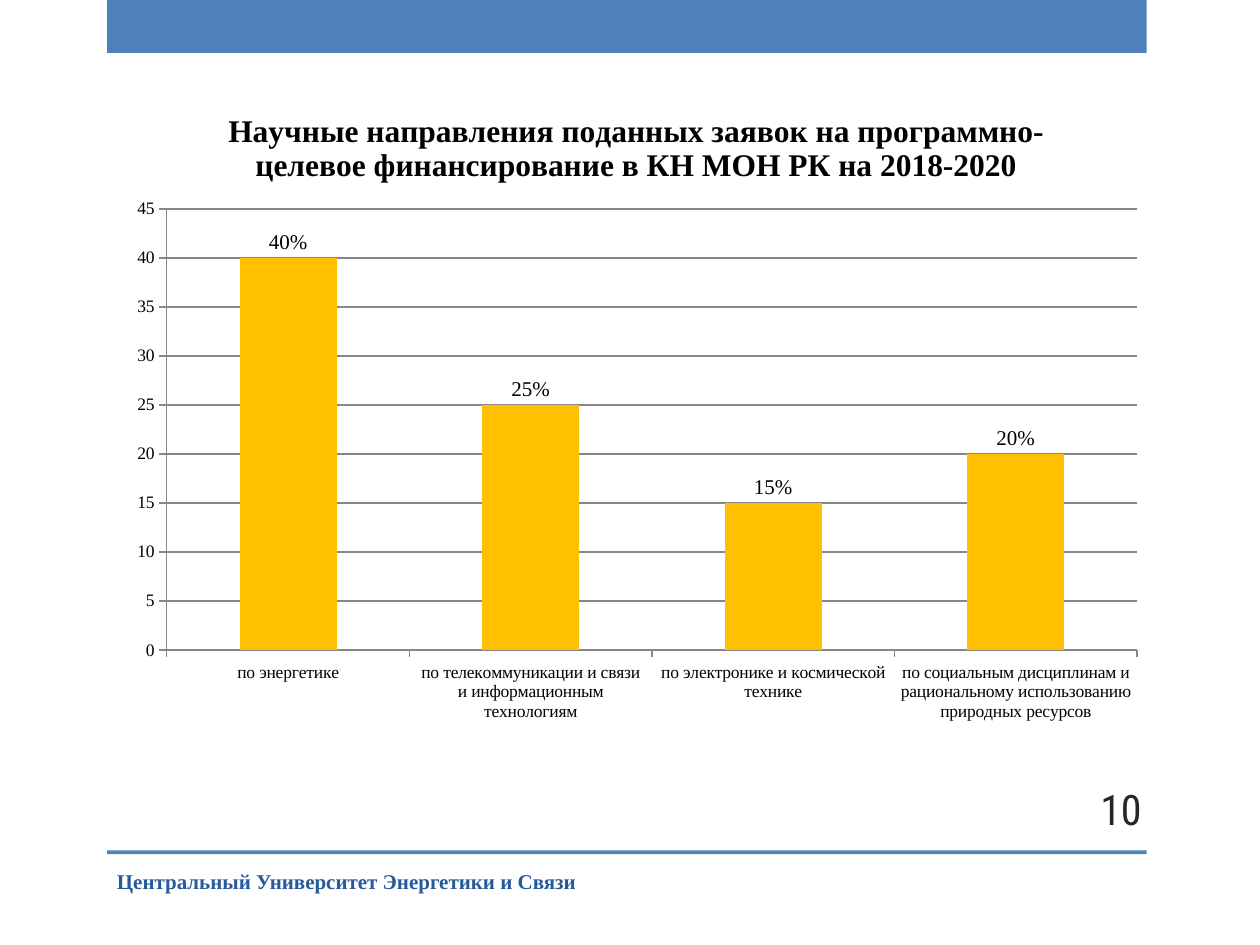
from dataclasses import dataclass

from lxml.etree import SubElement
from pptx import Presentation
from pptx.chart.data import CategoryChartData
from pptx.dml.color import RGBColor
from pptx.enum.chart import XL_CHART_TYPE, XL_LABEL_POSITION, XL_TICK_MARK
from pptx.enum.shapes import MSO_SHAPE
from pptx.enum.text import MSO_ANCHOR, PP_ALIGN
from pptx.oxml.ns import qn
from pptx.util import Inches, Pt


@dataclass(frozen=True)
class Theme:
    """Colours, fonts and type sizes of the slide."""
    band: str = "4F81BD"
    brand: str = "265A99"
    number: str = "262626"
    bar: str = "FFC000"
    grid: str = "878787"
    ink: str = "000000"
    serif: str = "Times New Roman"
    sans: str = "Roboto Condensed"
    axis: int = 10
    label: int = 12
    title: int = 18
    page: int = 24


@dataclass(frozen=True)
class Box:
    """A place on the slide, in inches."""
    left: float
    top: float
    width: float
    height: float

    def spot(self):
        """Return the place as lengths."""
        return tuple(map(Inches, (self.left, self.top, self.width, self.height)))


@dataclass(frozen=True)
class Note:
    """A line of text with its place and look."""
    text: str
    box: Box
    face: str
    size: int
    color: str
    bold: bool = False
    align: PP_ALIGN = PP_ALIGN.LEFT


THEME = Theme()
BANDS = [Box(0.85, 0, 8.25, 0.42), Box(0.85, 6.75, 8.25, 0.03)]
NOTES = [
    Note("Центральный Университет Энергетики и Связи", Box(0.83, 6.79, 5.33, 0.4),
         THEME.serif, THEME.label, THEME.brand, bold=True),
    Note("10", Box(8.33, 6.22, 0.83, 0.4), THEME.sans, THEME.page,
         THEME.number, align=PP_ALIGN.RIGHT),
]
TITLE = ("Научные направления поданных заявок на программно-целевое "
         "финансирование в КН МОН РК на 2018-2020")
SHARES = {
    "по энергетике": 40,
    "по телекоммуникации и связи и информационным технологиям": 25,
    "по электронике и космической технике": 15,
    "по социальным дисциплинам и рациональному использованию природных ресурсов": 20,
}
PLOT = {"x": 0.05, "y": 0.19, "w": 0.93, "h": 0.68}


def style(font, face: str, size: int, color: str, bold: bool = False) -> None:
    """Set the look of a font."""
    font.name, font.size, font.bold = face, Pt(size), bold
    font.color.rgb = RGBColor.from_string(color)


def draw_band(slide, box: Box) -> None:
    """Draw a plain coloured band."""
    band = slide.shapes.add_shape(MSO_SHAPE.RECTANGLE, *box.spot())
    band.shadow.inherit = False
    band.fill.solid()
    band.fill.fore_color.rgb = RGBColor.from_string(THEME.band)
    band.line.fill.background()


def draw_note(slide, note: Note) -> None:
    """Draw one line of text."""
    frame = slide.shapes.add_textbox(*note.box.spot()).text_frame
    frame.word_wrap = True
    frame.vertical_anchor = MSO_ANCHOR.MIDDLE
    line = frame.paragraphs[0]
    line.text, line.alignment = note.text, note.align
    style(line.font, note.face, note.size, note.color, note.bold)


def rule(line) -> None:
    """Set the look of an axis or grid line."""
    line.color.rgb = RGBColor.from_string(THEME.grid)
    line.width = Pt(0.75)


def place_plot(chart) -> None:
    """Fix the inner plot area by shares of the chart."""
    area = chart.plots[0]._element.getparent()
    layout = area.find(qn("c:layout"))
    if layout is None:
        layout = SubElement(area, qn("c:layout"))
        area.insert(0, layout)
    manual = SubElement(layout, qn("c:manualLayout"))
    parts = {"layoutTarget": "inner", "xMode": "edge", "yMode": "edge", **PLOT}
    for name, value in parts.items():
        SubElement(manual, qn(f"c:{name}")).set("val", str(value))


def draw_chart(slide, box: Box) -> None:
    """Draw the column chart of shares."""
    data = CategoryChartData()
    data.categories = list(SHARES)
    data.add_series("Series 1", list(SHARES.values()))
    chart = slide.shapes.add_chart(
        XL_CHART_TYPE.COLUMN_CLUSTERED, *box.spot(), data).chart
    style(chart.font, THEME.serif, THEME.axis, THEME.ink)
    chart.has_legend = False
    chart.has_title = True
    head = chart.chart_title.text_frame.paragraphs[0]
    head.text = TITLE
    style(head.font, THEME.serif, THEME.title, THEME.ink, bold=True)
    chart.chart_title.include_in_layout = False

    for axis in (chart.category_axis, chart.value_axis):
        axis.major_tick_mark = XL_TICK_MARK.OUTSIDE
        rule(axis.format.line)
    scale = chart.value_axis
    scale.minimum_scale, scale.maximum_scale, scale.major_unit = 0, 45, 5
    scale.has_major_gridlines = True
    rule(scale.major_gridlines.format.line)

    plot = chart.plots[0]
    plot.gap_width = 150
    plot.vary_by_categories = False
    fill = plot.series[0].format.fill
    fill.solid()
    fill.fore_color.rgb = RGBColor.from_string(THEME.bar)
    plot.has_data_labels = True
    labels = plot.data_labels
    labels.show_value = True
    labels.position = XL_LABEL_POSITION.OUTSIDE_END
    labels.number_format, labels.number_format_is_linked = '0"%"', False
    style(labels.font, THEME.serif, THEME.label, THEME.ink)
    place_plot(chart)


def main() -> None:
    """Build and save the slide."""
    deck = Presentation()
    deck.slide_width, deck.slide_height = Inches(10), Inches(7.5)
    slide = deck.slides.add_slide(deck.slide_layouts.get_by_name("Blank"))
    for box in BANDS:
        draw_band(slide, box)
    for note in NOTES:
        draw_note(slide, note)
    draw_chart(slide, Box(0.91, 0.68, 8.28, 5.15))
    deck.save("out.pptx")


if __name__ == "__main__":
    main()
